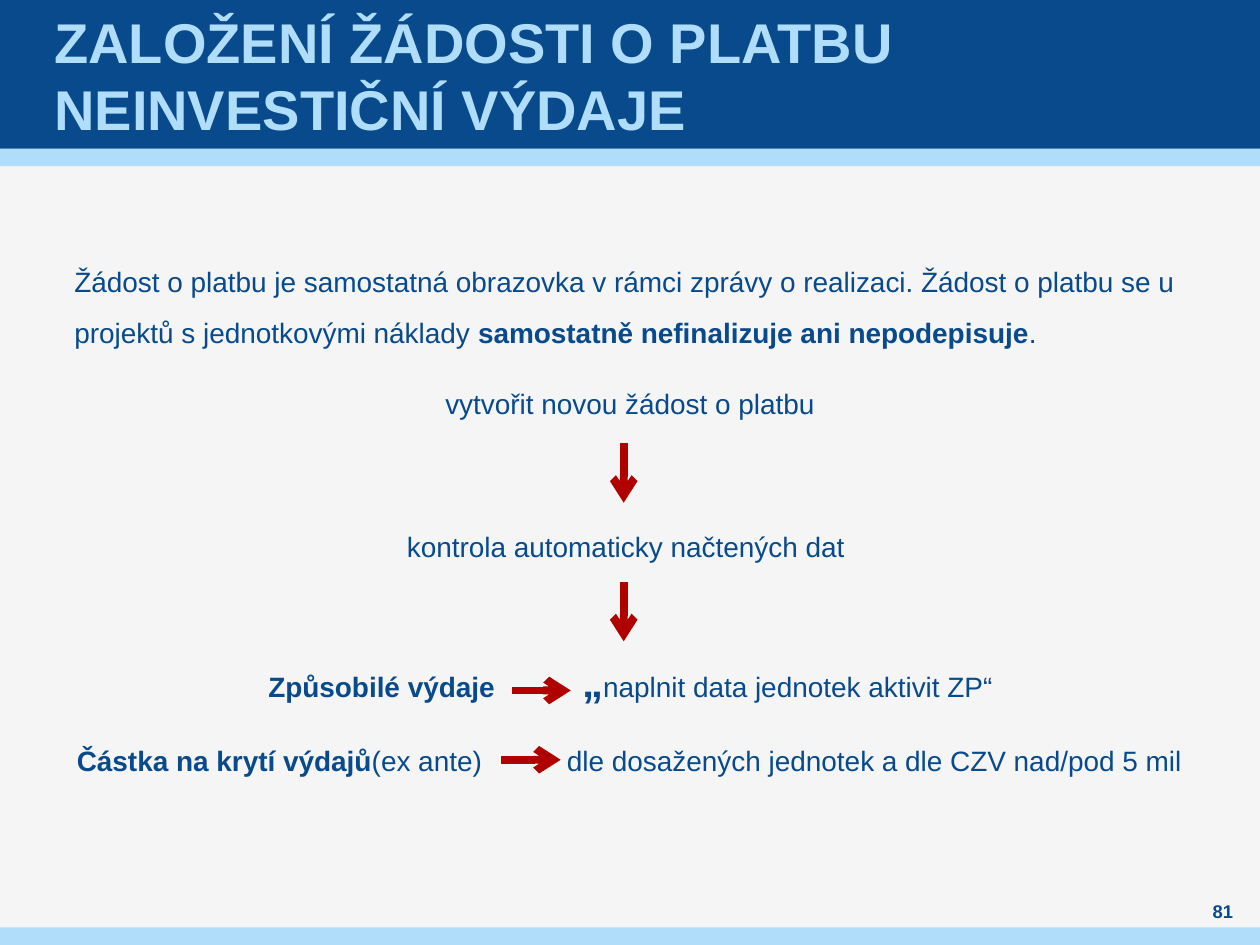
"""Build the slide on creating a payment request for non-investment expenses."""
from dataclasses import dataclass

from lxml.etree import SubElement
from pptx import Presentation
from pptx.dml.color import RGBColor
from pptx.enum.shapes import MSO_CONNECTOR, MSO_SHAPE
from pptx.enum.text import MSO_ANCHOR, PP_ALIGN
from pptx.oxml.ns import qn
from pptx.slide import Slide
from pptx.util import Inches, Pt


@dataclass(frozen=True)
class Theme:
    font: str = "Arial"
    navy: str = "084A8B"
    sky: str = "AFDDFA"
    red: str = "AF0100"
    paper: str = "F5F5F5"
    title_size: float = 32
    quote_size: float = 24
    body_size: float = 16
    number_size: float = 10.5
    arrow_width: float = 4.5
    line_height: float = 28.8
    paragraph_gap: float = 6


@dataclass(frozen=True)
class Span:
    text: str
    bold: bool = False
    size: float = Theme.body_size
    color: str = Theme.navy


@dataclass(frozen=True)
class Paragraph:
    spans: tuple[Span, ...]
    align: PP_ALIGN = PP_ALIGN.LEFT


@dataclass(frozen=True)
class TextBlock:
    left: float
    top: float
    width: float
    height: float
    paragraphs: tuple[Paragraph, ...]
    anchor: MSO_ANCHOR = MSO_ANCHOR.TOP
    side_inset: float = 0
    spaced: bool = True


@dataclass(frozen=True)
class Band:
    top: float
    height: float
    color: str


@dataclass(frozen=True)
class Arrow:
    left: float
    top: float
    across: float = 0
    down: float = 0


THEME = Theme()
PAGE_WIDTH, PAGE_HEIGHT = 10, 7.5
ROW_HEIGHT = 0.4
ARROW_LENGTH = 0.47

BANDS = (
    Band(1.18, 0.14, THEME.sky),
    Band(0, 1.18, THEME.navy),
    Band(7.36, 0.14, THEME.sky),
)


def row(left: float, top: float, width: float, *spans: Span) -> TextBlock:
    """Return a single left-aligned line of the process."""
    return TextBlock(left, top, width, ROW_HEIGHT, (Paragraph(spans),))


TITLE = Span("ZALOŽENÍ ŽÁDOSTI O PLATBU\vNEINVESTIČNÍ VÝDAJE", True, THEME.title_size, THEME.sky)
INTRODUCTION = Paragraph((
    Span("Žádost o platbu je samostatná obrazovka v rámci zprávy o realizaci. "
         "Žádost o platbu se u projektů s jednotkovými náklady "),
    Span("samostatně nefinalizuje ani nepodepisuje", True),
    Span("."),
))
FIRST_STEP = Paragraph((Span("vytvořit novou žádost o platbu"),), PP_ALIGN.CENTER)
PAGE_NUMBER = Paragraph((Span("81", True, THEME.number_size),), PP_ALIGN.CENTER)

TEXT_BLOCKS = (
    TextBlock(0.39, 0, 9.21, 1.18, (Paragraph((TITLE,)),), MSO_ANCHOR.MIDDLE, 0.04, False),
    TextBlock(0.59, 1.97, 8.82, 1.5, (INTRODUCTION, FIRST_STEP)),
    row(3.23, 4.07, 3.7, Span("kontrola automaticky načtených dat")),
    row(2.13, 5.18, 1.9, Span("Způsobilé výdaje", True)),
    row(4.62, 5.2, 3.6, Span("„", True, THEME.quote_size),
        Span("naplnit data jednotek aktivit ZP“")),
    row(0.61, 5.77, 3.36, Span("Částka na krytí výdajů", True), Span("(ex ante)")),
    row(4.5, 5.77, 5.2, Span("dle dosažených jednotek a dle CZV nad/pod 5 mil")),
    TextBlock(9.45, 7.13, 0.51, 0.2, (PAGE_NUMBER,), MSO_ANCHOR.MIDDLE, spaced=False),
)

ARROWS = (
    Arrow(4.95, 3.52, down=ARROW_LENGTH),
    Arrow(4.95, 4.62, down=ARROW_LENGTH),
    Arrow(4.06, 5.48, across=ARROW_LENGTH),
    Arrow(3.98, 6.03, across=ARROW_LENGTH),
)


def draw_band(page: Slide, band: Band) -> None:
    """Draw a full-width coloured band."""
    shape = page.shapes.add_shape(
        MSO_SHAPE.RECTANGLE, 0, Inches(band.top), Inches(PAGE_WIDTH), Inches(band.height))
    shape.shadow.inherit = False
    shape.fill.solid()
    shape.fill.fore_color.rgb = RGBColor.from_string(band.color)
    shape.line.fill.background()


def draw_text(page: Slide, block: TextBlock) -> None:
    """Draw a text box with its formatted paragraphs."""
    box = page.shapes.add_textbox(
        Inches(block.left), Inches(block.top), Inches(block.width), Inches(block.height))
    frame = box.text_frame
    frame.word_wrap = True
    frame.vertical_anchor = block.anchor
    frame.margin_left = frame.margin_right = Inches(block.side_inset)
    frame.margin_top = frame.margin_bottom = 0
    frame.text = "\n".join("".join(span.text for span in item.spans) if len(item.spans) == 1 else ""
                           for item in block.paragraphs)
    for paragraph, item in zip(frame.paragraphs, block.paragraphs):
        paragraph.alignment = item.align
        if block.spaced:
            paragraph.line_spacing = Pt(THEME.line_height)
            paragraph.space_before = paragraph.space_after = Pt(THEME.paragraph_gap)
        if len(item.spans) > 1:
            for span in item.spans:
                paragraph.add_run().text = span.text
        spans = item.spans if len(item.spans) > 1 else item.spans * len(paragraph.runs)
        for run, span in zip(paragraph.runs, spans):
            run.font.name = THEME.font
            run.font.size = Pt(span.size)
            run.font.bold = span.bold
            run.font.color.rgb = RGBColor.from_string(span.color)


def draw_arrow(page: Slide, arrow: Arrow) -> None:
    """Draw a straight arrow with an open head."""
    line = page.shapes.add_connector(
        MSO_CONNECTOR.STRAIGHT, Inches(arrow.left), Inches(arrow.top),
        Inches(arrow.left + arrow.across), Inches(arrow.top + arrow.down))
    line.line.color.rgb = RGBColor.from_string(THEME.red)
    line.line.width = Pt(THEME.arrow_width)
    properties = line.line._get_or_add_ln()
    SubElement(properties, qn("a:tailEnd"), type="arrow")
    SubElement(properties.getparent(), qn("a:effectLst"))


def main() -> None:
    """Create the deck and save it."""
    deck = Presentation()
    deck.slide_width, deck.slide_height = Inches(PAGE_WIDTH), Inches(PAGE_HEIGHT)
    page = deck.slides.add_slide(deck.slide_layouts[6])
    page.background.fill.solid()
    page.background.fill.fore_color.rgb = RGBColor.from_string(THEME.paper)
    for band in BANDS:
        draw_band(page, band)
    for block in TEXT_BLOCKS:
        draw_text(page, block)
    for arrow in ARROWS:
        draw_arrow(page, arrow)
    deck.save("out.pptx")


if __name__ == "__main__":
    main()
